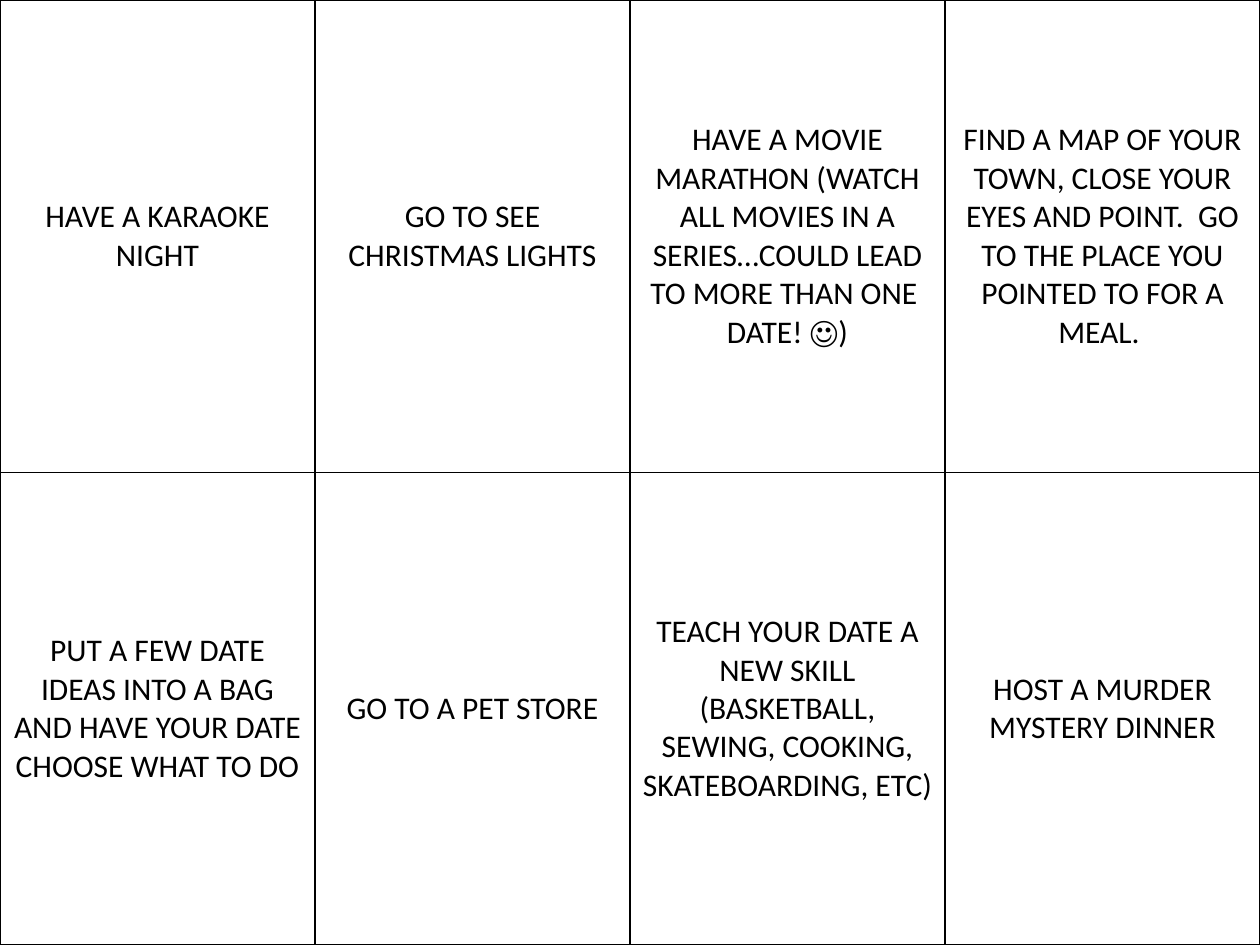
from lxml.etree import SubElement
from pptx import Presentation
from pptx.dml.color import RGBColor
from pptx.enum.text import MSO_ANCHOR, PP_ALIGN
from pptx.oxml.ns import qn
from pptx.util import Cm, Pt

BLACK = RGBColor(0, 0, 0)
WHITE = RGBColor(255, 255, 255)
FONT = "Calibri"
SLIDE_W, SLIDE_H = Cm(25.4), Cm(19.05)

DATE_IDEAS = [
    [
        "HAVE A KARAOKE NIGHT",
        "GO TO SEE CHRISTMAS LIGHTS",
        "HAVE A MOVIE MARATHON (WATCH ALL MOVIES IN A SERIES…COULD LEAD "
        "TO MORE THAN ONE \nDATE! ☺)",
        "FIND A MAP OF YOUR TOWN, CLOSE YOUR EYES AND POINT.  GO TO THE "
        "PLACE YOU POINTED TO FOR A MEAL. ",
    ],
    [
        "PUT A FEW DATE IDEAS INTO A BAG AND HAVE YOUR DATE CHOOSE WHAT TO DO",
        "GO TO A PET STORE",
        "TEACH YOUR DATE A NEW SKILL (BASKETBALL, SEWING, COOKING, "
        "SKATEBOARDING, ETC)",
        "HOST A MURDER MYSTERY DINNER",
    ],
]


def set_borders(cell, color, width):
    tc_pr = cell._tc.get_or_add_tcPr()
    for side in ("lnL", "lnR", "lnT", "lnB"):
        ln = SubElement(tc_pr, qn(f"a:{side}"), w=str(width))
        fill = SubElement(ln, qn("a:solidFill"))
        SubElement(fill, qn("a:srgbClr"), val=str(color))


def fill_card(cell, text):
    """Write one date idea, centred in a white cell with a thin border."""
    set_borders(cell, BLACK, Pt(1))
    cell.fill.solid()
    cell.fill.fore_color.rgb = WHITE
    cell.vertical_anchor = MSO_ANCHOR.MIDDLE
    cell.text_frame.text = text
    for p in cell.text_frame.paragraphs:
        p.alignment = PP_ALIGN.CENTER
        for r in p.runs:
            r.font.name = FONT
            r.font.size = Pt(18)
            r.font.bold = False
            r.font.color.rgb = BLACK


def add_card_table(slide, ideas):
    n_rows, n_cols = len(ideas), len(ideas[0])
    table = slide.shapes.add_table(
        n_rows, n_cols, Cm(0), Cm(0), SLIDE_W, SLIDE_H).table
    table.first_row = False
    table.horz_banding = False
    for row, texts in zip(table.rows, ideas):
        for cell, text in zip(row.cells, texts):
            fill_card(cell, text)


def main():
    prs = Presentation()
    prs.slide_width, prs.slide_height = SLIDE_W, SLIDE_H
    slide = prs.slides.add_slide(prs.slide_layouts[6])
    add_card_table(slide, DATE_IDEAS)
    prs.save("out.pptx")


if __name__ == "__main__":
    main()
